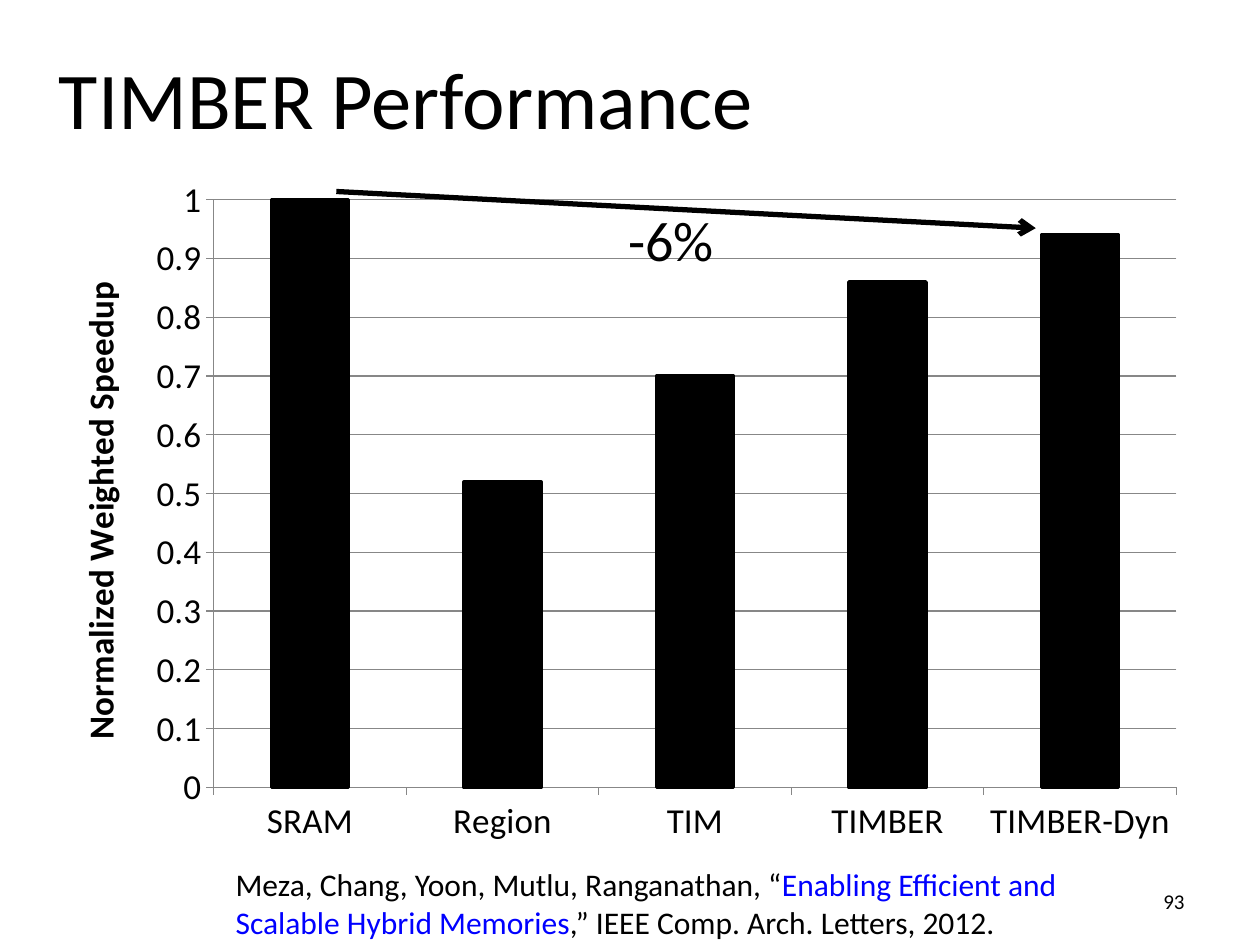
from lxml import etree
from pptx import Presentation
from pptx.chart.data import CategoryChartData as ChartData
from pptx.dml.color import RGBColor as RGB
from pptx.enum.chart import XL_CHART_TYPE as ChartType, XL_TICK_MARK as Tick
from pptx.enum.shapes import MSO_CONNECTOR as Connector
from pptx.enum.text import MSO_ANCHOR as Anchor, MSO_AUTO_SIZE as AutoSize, PP_ALIGN as Align
from pptx.oxml import parse_xml
from pptx.oxml.ns import nsdecls, qn
from pptx.util import Cm, Pt

COLORS = {"ink": "000000", "link": "0000FF", "grid": "878787"}


def rgb(name):
    return RGB.from_string(COLORS[name])


class SlideBuilder:
    font = "Calibri"

    def __init__(self, prs):
        self.s = prs.slides.add_slide(prs.slide_layouts[6])

    def style(self, font, size, color="ink", bold=False):
        font.name, font.size, font.bold = self.font, Pt(size), bold
        font.color.rgb = rgb(color)

    def text(self, box, runs, size, align=Align.LEFT, anchor=Anchor.TOP, wrap=True, grow=False):
        tf = self.s.shapes.add_textbox(*map(Cm, box)).text_frame
        tf.word_wrap, tf.vertical_anchor = wrap, anchor
        tf.auto_size = AutoSize.SHAPE_TO_FIT_TEXT if grow else AutoSize.NONE
        p = tf.paragraphs[0]
        p.alignment = align
        self.style(p.font, size)
        for content, color in runs:
            r = p.add_run()
            r.text = content
            r.font.color.rgb = rgb(color)

    def arrow(self, start, end, width):
        sp = self.s.shapes.add_connector(Connector.STRAIGHT, *map(Cm, start + end))
        sp.line.color.rgb, sp.line.width = rgb("ink"), Pt(width)
        etree.SubElement(sp.line._get_or_add_ln(), qn("a:tailEnd"), type="arrow")
        etree.SubElement(sp._element.spPr, qn("a:effectLst"))

    def columns(self, box, values, axis_title, size, plot_box):
        data = ChartData()
        data.categories = list(values)
        data.add_series("Series 1", list(values.values()))
        chart = self.s.shapes.add_chart(ChartType.COLUMN_CLUSTERED, *map(Cm, box), data).chart
        chart.has_legend = chart.has_title = False
        self.style(chart.font, size)
        plot = chart.plots[0]
        plot.gap_width, plot.vary_by_categories = 150, False
        bars = plot.series[0].format
        bars.fill.solid()
        bars.fill.fore_color.rgb = bars.line.color.rgb = rgb("ink")
        bars.line.width = Pt(2)
        axis = chart.value_axis
        axis.minimum_scale, axis.maximum_scale, axis.major_unit = 0, 1, 0.1
        axis.tick_labels.number_format = "General"
        axis.tick_labels.number_format_is_linked = False
        axis.has_major_gridlines = True
        for line in (axis.format.line, chart.category_axis.format.line,
                     axis.major_gridlines.format.line):
            line.color.rgb, line.width = rgb("grid"), Pt(0.75)
        for ax in (axis, chart.category_axis):
            ax.major_tick_mark = Tick.OUTSIDE
        tf = axis.axis_title.text_frame
        tf.text = axis_title
        self.style(tf.paragraphs[0].font, size, bold=True)
        self.place_plot(chart, plot_box)

    def place_plot(self, chart, plot_box):
        area = chart._chartSpace.chart.plotArea
        for old in area.findall(qn("c:layout")):
            area.remove(old)
        sizes = "".join(f'<c:{k} val="{v}"/>' for k, v in zip("xywh", plot_box))
        area.insert(0, parse_xml(
            f'<c:layout {nsdecls("c")}><c:manualLayout><c:layoutTarget val="inner"/>'
            f'<c:xMode val="edge"/><c:yMode val="edge"/>{sizes}</c:manualLayout></c:layout>'))


def main():
    prs = Presentation()
    prs.slide_width, prs.slide_height = Cm(25.4), Cm(19.05)
    slide = SlideBuilder(prs)
    speedups = {"SRAM": 1, "Region": 0.52, "TIM": 0.7, "TIMBER": 0.86, "TIMBER-Dyn": 0.94}
    slide.columns((0.94, 3.33, 23.24, 13.94), speedups, "Normalized Weighted Speedup", 20,
                  (0.145, 0.05, 0.835, 0.85))
    slide.text((18.21, 17.65, 5.92, 1.02), [("93", "ink")], 12, Align.RIGHT, Anchor.MIDDLE)
    slide.text((0.94, 1.17, 23.27, 1.57), [("TIMBER Performance", "ink")], 46,
               anchor=Anchor.MIDDLE)
    slide.text((12.42, 4.01, 2.26, 1.63), [("-6%", "ink")], 32, wrap=False, grow=True)
    slide.arrow((6.78, 3.86), (20.88, 4.6), 3)
    slide.text((4.5, 17.32, 18.59, 1.8), [
        ("Meza, Chang, Yoon, Mutlu, Ranganathan, “", "ink"),
        ("Enabling Efficient and Scalable Hybrid Memories", "link"),
        (",” IEEE Comp. Arch. Letters, 2012.", "ink"),
    ], 18, grow=True)
    prs.save("out.pptx")


if __name__ == "__main__":
    main()
